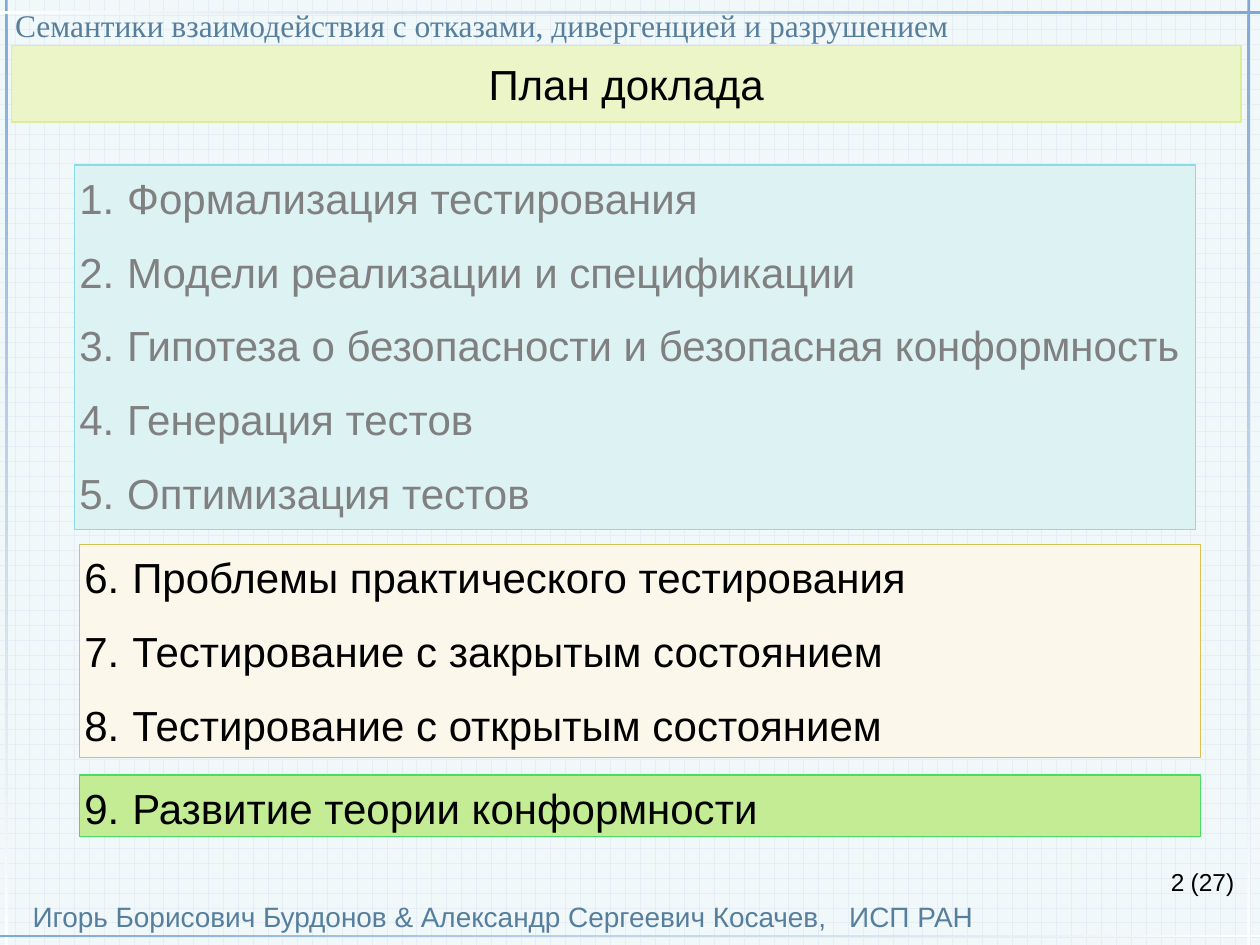
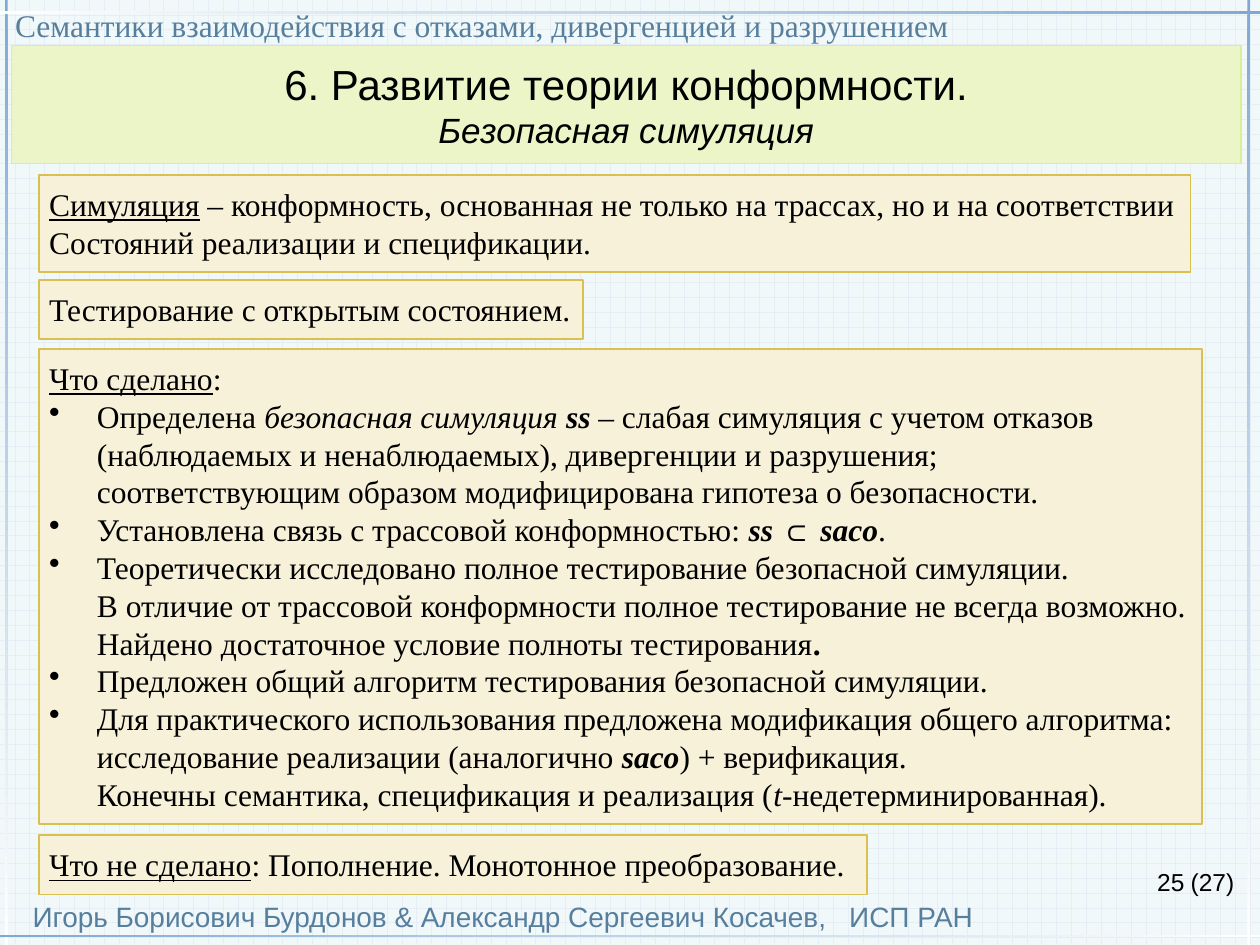
"""Build two slides of a talk on testing conformance: the plan and safe simulation."""
from lxml import etree
from pptx import Presentation
from pptx.dml.color import RGBColor
from pptx.enum.dml import MSO_PATTERN
from pptx.enum.shapes import MSO_SHAPE
from pptx.enum.text import MSO_ANCHOR, MSO_AUTO_SIZE, PP_ALIGN
from pptx.oxml.ns import qn
from pptx.util import Inches, Pt

RECT = MSO_SHAPE.RECTANGLE
BRICK = MSO_PATTERN.HORIZONTAL_BRICK
TOP, MIDDLE = MSO_ANCHOR.TOP, MSO_ANCHOR.MIDDLE
FIT, NO_FIT = MSO_AUTO_SIZE.SHAPE_TO_FIT_TEXT, MSO_AUTO_SIZE.NONE
LEFT, CENTER, RIGHT = PP_ALIGN.LEFT, PP_ALIGN.CENTER, PP_ALIGN.RIGHT
SANS, SERIF = "Arial", "Times New Roman"
HANG = Inches(0.38)
COLORS = {name: RGBColor.from_string(value) for name, value in {
    "grid": "E7EDF5", "paper": "F1F8F9", "rule": "7FA9D3", "white": "FFFFFF",
    "title": "EBF5C7", "title_line": "DBED97", "caption": "567F9E",
    "text": "000000", "done": "808080", "aqua": "DDF2F3", "aqua_line": "89DCE7",
    "cream": "FBF8EB", "sand": "F7F1D9", "gold": "DAC052",
    "green": "C4EC94", "green_line": "49DB65"}.items()}


def style_box(sp, at, fill=None, line=None, weight=0.75, inset=(0, 0), anchor=TOP, wrap=True):
    """Place a shape and set its fill, outline and text frame."""
    sp.left, sp.top, sp.width, sp.height = [Inches(v) for v in at]
    if fill:
        sp.shadow.inherit = False
        sp.fill.solid()
        sp.fill.fore_color.rgb = COLORS[fill]
        sp.line.color.rgb = COLORS[line]
        sp.line.width = Pt(weight)
    tf = sp.text_frame
    tf.margin_left = tf.margin_right = Inches(inset[0])
    tf.margin_top = tf.margin_bottom = Inches(inset[1])
    tf.vertical_anchor = anchor
    tf.word_wrap = wrap
    tf.auto_size = NO_FIT if wrap else FIT
    return tf


def write(tf, paras, font, size, color="text", align=LEFT, gap=0, bullet=None, start=1):
    """Write paragraphs of (text, style) parts; styles are letters out of b, i, u."""
    for n, parts in enumerate(paras):
        p = tf.paragraphs[0] if n == 0 else tf.add_paragraph()
        p.alignment = align
        if bullet:
            pPr = p._p.get_or_add_pPr()
            pPr.set("marL", str(HANG))
            pPr.set("indent", str(-HANG))
            if bullet == "number":
                etree.SubElement(pPr, qn("a:buAutoNum"), type="arabicPeriod", startAt=str(start))
            elif n > 0:
                etree.SubElement(pPr, qn("a:buChar"), char=bullet)
        p.space_before = Pt(gap if n else 0)
        for text, style in [(parts, "")] if isinstance(parts, str) else parts:
            for k, row in enumerate(text.split("\n")):
                if k:
                    p.add_line_break()
                r = p.add_run()
                r.text = row
                r.font.name, r.font.size = font, Pt(size)
                r.font.color.rgb = COLORS[color]
                r.font.bold, r.font.italic = "b" in style, "i" in style
                r.font.underline = "u" in style


prs = Presentation()
prs.slide_width, prs.slide_height = Inches(10), Inches(7.5)

RULES = [((0.04, 0, 0.02, 7.5), 270, ("rule", "white")),
         ((0, 0.09, 10, 0.02), 0, ("white", "rule")),
         ((0, 7.42, 10, 0.02), 0, ("rule", "white")),
         ((9.9, 0, 0.02, 7.5), 270, ("rule", "white"))]
CAPTIONS = [
    ((0.12, 0.05, 9.73, 0.3), SERIF, 18, "caption",
     "Семантики взаимодействия с отказами, дивергенцией и разрушением"),
    ((0.26, 7.14, 8, 0.27), SANS, 16, "caption",
     "Игорь Борисович Бурдонов & Александр Сергеевич Косачев,   ИСП РАН"),
    ((9.45, 6.88, 0.4, 0.24), SANS, 14, "text", "(27)")]
PAGES = [("2", 0.61, ["План доклада"]),
         ("25", 0.94, ["6. Развитие теории конформности.", "Безопасная симуляция"])]

slides = []
for number, height, heading in PAGES:
    s = prs.slides.add_slide(prs.slide_layouts[5])
    slides.append(s)
    bg = s.background.fill
    bg.patterned()
    bg.pattern = BRICK
    bg.fore_color.rgb, bg.back_color.rgb = COLORS["grid"], COLORS["paper"]

    tf = style_box(s.shapes.title, (0.09, 0.36, 9.76, height), "title", "title_line",
                   inset=(0.06, 0.1), anchor=MIDDLE)
    write(tf, heading, SANS, 24, align=CENTER)
    for p in tf.paragraphs[1:]:
        p.runs[0].font.size = Pt(20)
        p.runs[0].font.italic = True

    for at, angle, stops in RULES:
        sp = s.shapes.add_shape(RECT, *[Inches(v) for v in at])
        sp.shadow.inherit = False
        sp.line.fill.background()
        sp.fill.gradient()
        sp.fill.gradient_angle = angle
        for stop, name in zip(sp.fill.gradient_stops, stops):
            stop.color.rgb = COLORS[name]

    for at, font, size, color, text in CAPTIONS:
        tf = style_box(s.shapes.add_textbox(0, 0, 0, 0), at)
        write(tf, [text], font, size, color)
    tf = style_box(s.shapes.add_textbox(0, 0, 0, 0), (7.17, 6.83, 2.33, 0.52), inset=(0.1, 0.05))
    write(tf, [number], SANS, 14, align=RIGHT)

plan, simulation = slides

PLAN = [
    ((0.59, 1.31, 8.9, 2.89), "aqua", "aqua_line", "done", 1,
     ["Формализация тестирования", "Модели реализации и спецификации",
      "Гипотеза о безопасности и безопасная конформность",
      "Генерация тестов", "Оптимизация тестов"]),
    ((0.63, 4.32, 8.9, 1.69), "cream", "gold", "text", 6,
     ["Проблемы практического тестирования", "Тестирование с закрытым состоянием",
      "Тестирование с открытым состоянием"]),
    ((0.63, 6.15, 8.9, 0.49), "green", "green_line", "text", 9,
     ["Развитие теории конформности"])]
for at, fill, line, color, start, items in PLAN:
    tf = style_box(plan.shapes.add_shape(RECT, 0, 0, 0, 0), at, fill, line, inset=(0.04, 0.06))
    write(tf, items, SANS, 24, color, gap=13.3, bullet="number", start=start)

NOTES = [
    ((0.31, 1.39, 9.14, 0.77), [
        [("Симуляция", "u"),
         (" – конформность, основанная не только на трассах, но и на соответствии", "")],
        "Состояний реализации и спецификации."]),
    ((0.31, 2.22, 4.32, 0.47), ["Тестирование с открытым состоянием."]),
    ((0.31, 2.77, 9.23, 3.77), [
        [("Что сделано", "u"), (":", "")],
        [("Определена ", ""), ("безопасная симуляция ", "i"), ("ss", "bi"),
         (" – слабая симуляция с учетом отказов\n"
          "(наблюдаемых и ненаблюдаемых), дивергенции и разрушения;\n"
          "соответствующим образом модифицирована гипотеза о безопасности.", "")],
        [("Установлена связь с трассовой конформностью: ", ""), ("ss", "bi"), (" ⊂ ", ""),
         ("saco", "bi"), (".", "")],
        [("Теоретически исследовано полное тестирование безопасной симуляции.\n"
          "В отличие от трассовой конформности полное тестирование не всегда возможно.\n"
          "Найдено достаточное условие полноты тестирования", ""), (".", "b")],
        "Предложен общий алгоритм тестирования безопасной симуляции.",
        [("Для практического использования предложена модификация общего алгоритма:\n"
          "исследование реализации (аналогично ", ""), ("saco", "bi"),
         (") + верификация.\nКонечны семантика, спецификация и реализация (", ""),
         ("t", "i"), ("-недетерминированная).", "")]]),
    ((0.31, 6.63, 6.57, 0.47), [
        [("Что не сделано", "u"), (": Пополнение. Монотонное преобразование.", "")]])]
for at, paras in NOTES:
    tf = style_box(simulation.shapes.add_shape(RECT, 0, 0, 0, 0), at, "sand", "gold", 1,
                   inset=(0.08, 0.08), wrap=False)
    write(tf, paras, SERIF, 18, bullet="•" if len(paras) > 2 else None)

prs.save("out.pptx")
